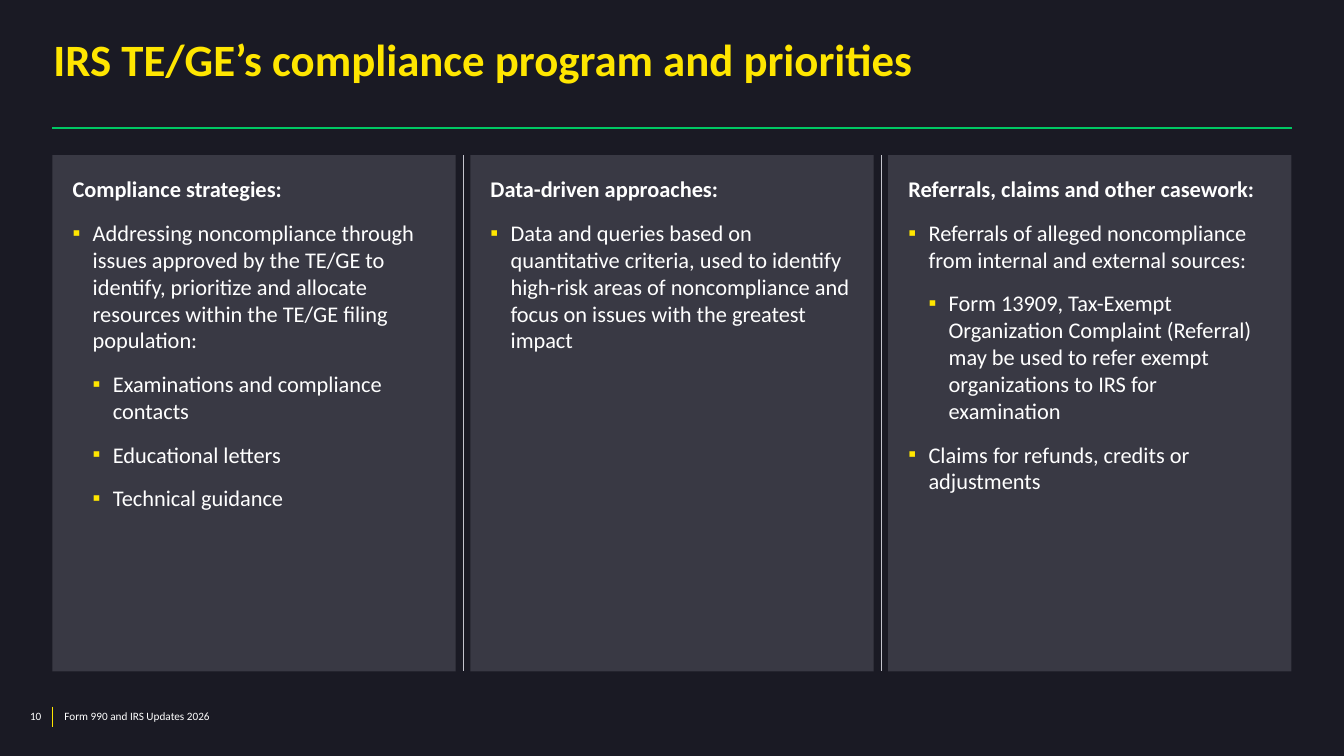
from lxml import etree
from pptx import Presentation
from pptx import util as u
from pptx.dml.color import RGBColor
from pptx.enum import shapes, text
from pptx.oxml.ns import qn

YELLOW, WHITE, GREEN = "FFE600", "FFFFFF", "00C864"
INK, PANEL, DIVIDER = "1A1A24", "747480", "C4C4CD"


def color(value):
    return RGBColor.from_string(value)


def write(paragraph, words, size, ink=WHITE, bold=False):
    run = paragraph.add_run()
    run.text = words
    values = {"name": "Calibri", "size": u.Pt(size), "bold": bold}
    for name, value in values.items():
        setattr(run.font, name, value)
    run.font.color.rgb = color(ink)


presentation = Presentation()
presentation.slide_width, presentation.slide_height = u.Inches(13.33), u.Inches(7.5)
slide = presentation.slides.add_slide(presentation.slide_layouts[5])
slide.background.fill.solid()
slide.background.fill.fore_color.rgb = color(INK)

# Grid: three columns between equal margins
left, right, top, bottom = 0.52, 12.81, 1.54, 6.66
column_width = 4
gap = (right - left - 3 * column_width) / 2
pitch = column_width + gap

# Title
title = slide.shapes.title
title_format = {"left": left + 0.01, "top": 0.4, "width": right - left, "height": 0.51}
for name, value in title_format.items():
    setattr(title, name, u.Inches(value))
frame_format = {"margin_left": 0, "margin_right": 0, "margin_top": 0, "margin_bottom": 0,
                "word_wrap": True, "auto_size": text.MSO_AUTO_SIZE.NONE,
                "vertical_anchor": text.MSO_ANCHOR.TOP}
for name, value in frame_format.items():
    setattr(title.text_frame, name, value)
paragraph = title.text_frame.paragraphs[0]
paragraph.alignment = text.PP_ALIGN.LEFT
paragraph.line_spacing = 0.85
write(paragraph, "IRS TE/GE’s compliance program and priorities", 32, YELLOW, True)

# Title rule, footer bar and column dividers
lines = [(left, 1.27, right, 1.27, GREEN, 2), (left, 7.01, left, 7.21, YELLOW, 1)]
for number in (1, 2):
    x = left + number * pitch - gap / 2
    lines.append((x, top, x, bottom, DIVIDER, 0.25))
for x1, y1, x2, y2, ink, weight in lines:
    line = slide.shapes.add_connector(shapes.MSO_CONNECTOR.STRAIGHT,
                                      *[u.Inches(value) for value in (x1, y1, x2, y2)])
    line.line.color.rgb = color(ink)
    line.line.width = u.Pt(weight)
    etree.SubElement(line._element.spPr, qn("a:effectLst"))

# Footer: page number and deck name
footers = [(0.11, 0.4, "10", text.PP_ALIGN.RIGHT, "margin_right"),
           (0.54, 6, "Form 990 and IRS Updates 2026", text.PP_ALIGN.LEFT, "margin_left")]
for x, width, words, alignment, inset in footers:
    box = slide.shapes.add_textbox(u.Inches(x), u.Inches(7.04), u.Inches(width), u.Inches(0.13))
    footer_format = {**frame_format, inset: u.Inches(0.1),
                     "vertical_anchor": text.MSO_ANCHOR.MIDDLE}
    for name, value in footer_format.items():
        setattr(box.text_frame, name, value)
    box.text_frame.paragraphs[0].alignment = alignment
    write(box.text_frame.paragraphs[0], words, 8)

# Columns: heading, then bullets as (level, words)
columns = [
    ("Compliance strategies:", [
        (1, "Addressing noncompliance through issues approved by the TE/GE to identify, "
            "prioritize and allocate resources within the TE/GE filing population:"),
        (2, "Examinations and compliance contacts"),
        (2, "Educational letters"),
        (2, "Technical guidance")]),
    ("Data-driven approaches:", [
        (1, "Data and queries based on quantitative criteria, used to identify high-risk "
            "areas of noncompliance and focus on issues with the greatest impact")]),
    ("Referrals, claims and other casework:", [
        (1, "Referrals of alleged noncompliance from internal and external sources:"),
        (2, "Form 13909, Tax-Exempt Organization Complaint (Referral) may be used to refer "
            "exempt organizations to IRS for examination"),
        (1, "Claims for refunds, credits or adjustments")]),
]
panel_format = {**frame_format, "margin_left": u.Inches(0.2), "margin_right": u.Inches(0.2),
                "margin_top": u.Inches(0.2), "margin_bottom": u.Inches(0.1)}
for index, (heading, bullets) in enumerate(columns):
    panel = slide.shapes.add_shape(shapes.MSO_SHAPE.RECTANGLE, u.Inches(left + index * pitch),
                                   u.Inches(top), u.Inches(column_width), u.Inches(bottom - top))
    panel.shadow.inherit = False
    panel.line.fill.background()
    panel.fill.solid()
    panel.fill.fore_color.rgb = color(PANEL)
    fill_color = panel._element.spPr.find(".//" + qn("a:srgbClr"))
    etree.SubElement(fill_color, qn("a:alpha"), val="35000")
    frame = panel.text_frame
    for name, value in panel_format.items():
        setattr(frame, name, value)

    for level, words in [(0, heading)] + bullets:
        paragraph = frame.add_paragraph() if level else frame.paragraphs[0]
        if level:
            properties = paragraph._p.get_or_add_pPr()
            properties.set("marL", str(u.Inches(0.2 * level)))
            properties.set("indent", str(-u.Inches(0.2)))
            bullet_color = etree.SubElement(properties, qn("a:buClr"))
            etree.SubElement(bullet_color, qn("a:srgbClr"), val=YELLOW)
            etree.SubElement(properties, qn("a:buFont"), typeface="Arial")
            etree.SubElement(properties, qn("a:buChar"), char="▪")
        paragraph.alignment = text.PP_ALIGN.LEFT
        paragraph.space_after = u.Pt(12)
        write(paragraph, words, 16, bold=level == 0)

presentation.save("out.pptx")
